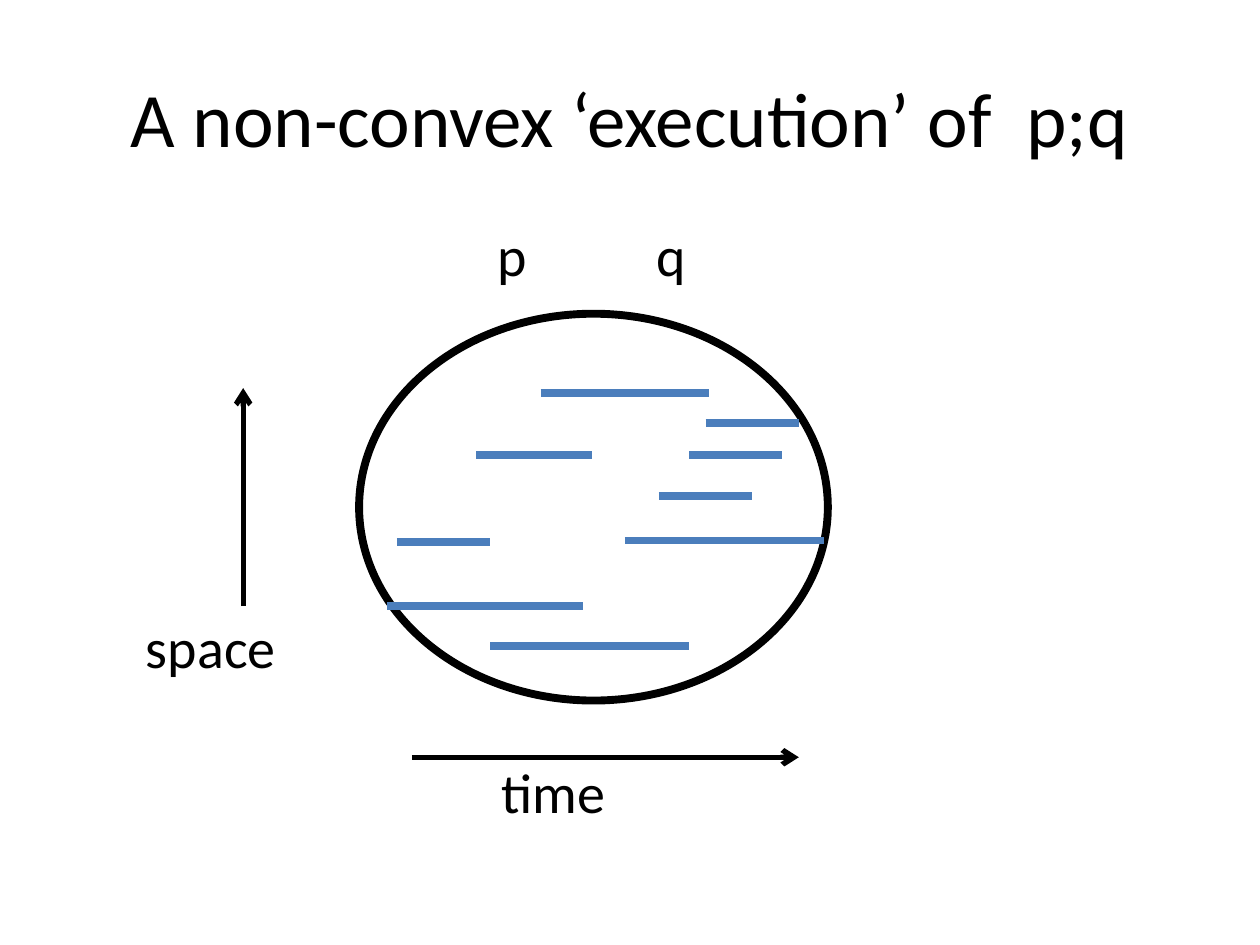
import dataclasses

import pptx
import pptx.dml.color
import pptx.enum.shapes
import pptx.enum.text
import pptx.oxml.ns
import pptx.util
from lxml import etree

# The page is a grid of square cells; positions are given in columns and rows.
COLUMNS, ROWS = 100, 75
CELL = pptx.util.Inches(0.1)


@dataclasses.dataclass(frozen=True)
class Theme:
    font: str = "Calibri"
    ink: str = "000000"
    event: str = "4B7EBC"
    title_size: float = 44
    label_size: float = 32
    heavy: float = 4.5
    medium: float = 3


THEME = Theme()

# Each event: first column, last column, row
EVENTS = [
    (42.9, 56.3, 31.2),
    (56, 63.4, 33.6),
    (37.8, 47, 36.1),
    (54.7, 62.1, 36.1),
    (52.3, 59.7, 39.4),
    (49.6, 65.4, 42.9),
    (31.5, 38.9, 43),
    (30.7, 46.3, 48.1),
    (38.9, 54.7, 51.3),
]

# Each label: text, column, row, width, wraps
LABELS = [
    ("p", 38.5, 17, 4.4, False),
    ("q", 51.1, 17, 4.4, False),
    ("space", 10.6, 48.1, 17.5, True),
    ("time", 38.8, 59.6, 17.5, True),
]


def cells(*counts):
    return [round(count * CELL) for count in counts]


def color(code):
    return pptx.dml.color.RGBColor.from_string(code)


def style_line(line, code, width):
    line.color.rgb = color(code)
    line.width = pptx.util.Pt(width)


def add_text(page, text, place, size, wrap=True):
    box = page.shapes.add_textbox(*cells(*place))
    frame = box.text_frame
    frame.word_wrap = wrap
    para = frame.paragraphs[0]
    span = para.add_run()
    span.text = text
    span.font.name = THEME.font
    span.font.size = pptx.util.Pt(size)
    span.font.color.rgb = color(THEME.ink)
    return frame


def add_title(page, text):
    frame = add_text(page, text, (5, 3, 90, 12.5), THEME.title_size)
    frame.vertical_anchor = pptx.enum.text.MSO_ANCHOR.MIDDLE
    frame.paragraphs[0].alignment = pptx.enum.text.PP_ALIGN.CENTER


def add_label(page, text, column, row, width, wrap):
    frame = add_text(page, text, (column, row, width, 6.4), THEME.label_size, wrap)
    frame.auto_size = pptx.enum.text.MSO_AUTO_SIZE.SHAPE_TO_FIT_TEXT


def add_region(page, *place):
    region = page.shapes.add_shape(
        pptx.enum.shapes.MSO_SHAPE.OVAL, *cells(*place))
    region.shadow.inherit = False
    region.fill.background()
    style_line(region.line, THEME.ink, THEME.heavy)


def add_line(page, start, end, code, width):
    line = page.shapes.add_connector(
        pptx.enum.shapes.MSO_CONNECTOR.STRAIGHT, *cells(*start, *end))
    style_line(line.line, code, width)
    etree.SubElement(line._element.spPr, pptx.oxml.ns.qn("a:effectLst"))
    return line


def add_axis(page, start, end):
    """Draw a line with an open arrowhead at its end."""
    axis = add_line(page, start, end, THEME.ink, THEME.medium)
    outline = axis._element.spPr.find(pptx.oxml.ns.qn("a:ln"))
    etree.SubElement(outline, pptx.oxml.ns.qn("a:tailEnd"), type="arrow")


def main():
    deck = pptx.Presentation()
    deck.slide_width, deck.slide_height = cells(COLUMNS, ROWS)
    page = deck.slides.add_slide(deck.slide_layouts[6])

    add_title(page, "A non-convex ‘execution’ of  p;q")
    add_region(page, 28.5, 24.9, 37.2, 30.7)
    for first, last, row in EVENTS:
        add_line(page, (first, row), (last, row), THEME.event, THEME.heavy)
    add_axis(page, (32.7, 60.1), (63.4, 60.1))
    add_axis(page, (19.3, 48.1), (19.3, 30.8))
    for label in LABELS:
        add_label(page, *label)

    deck.save("out.pptx")


if __name__ == "__main__":
    main()
